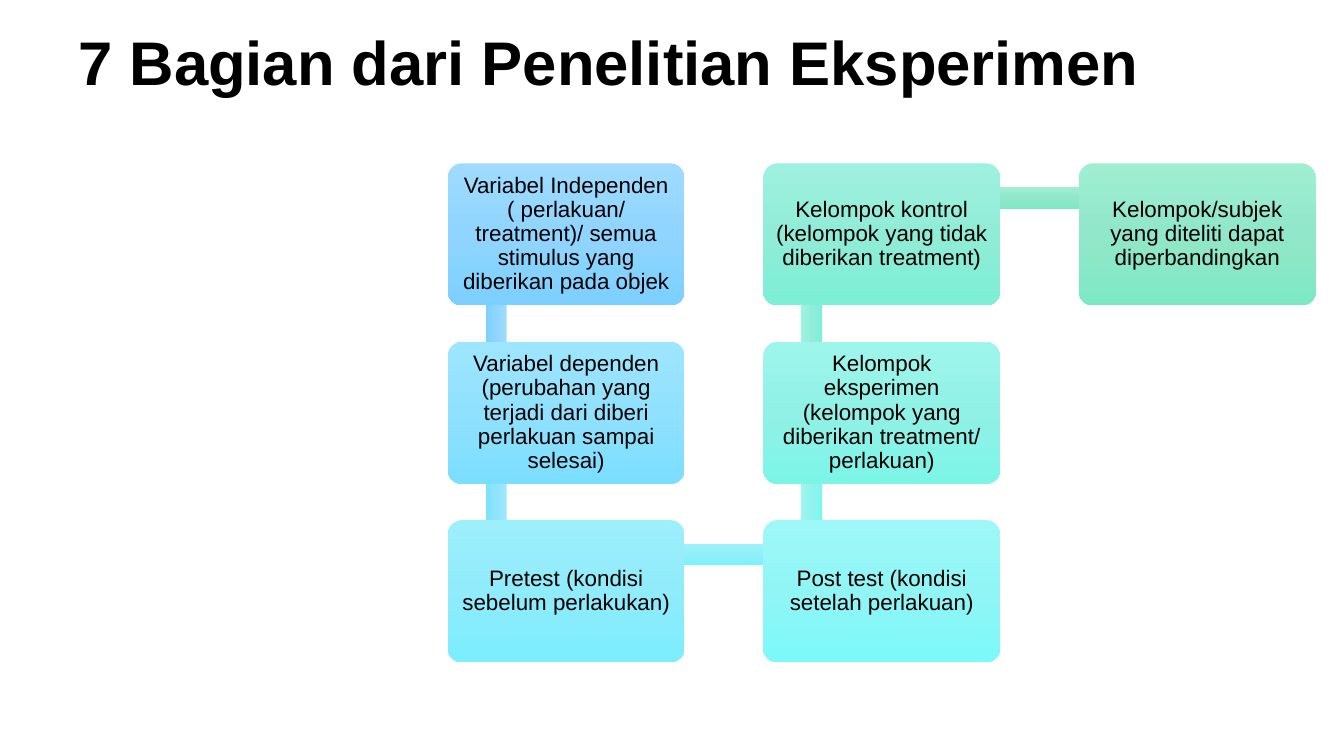
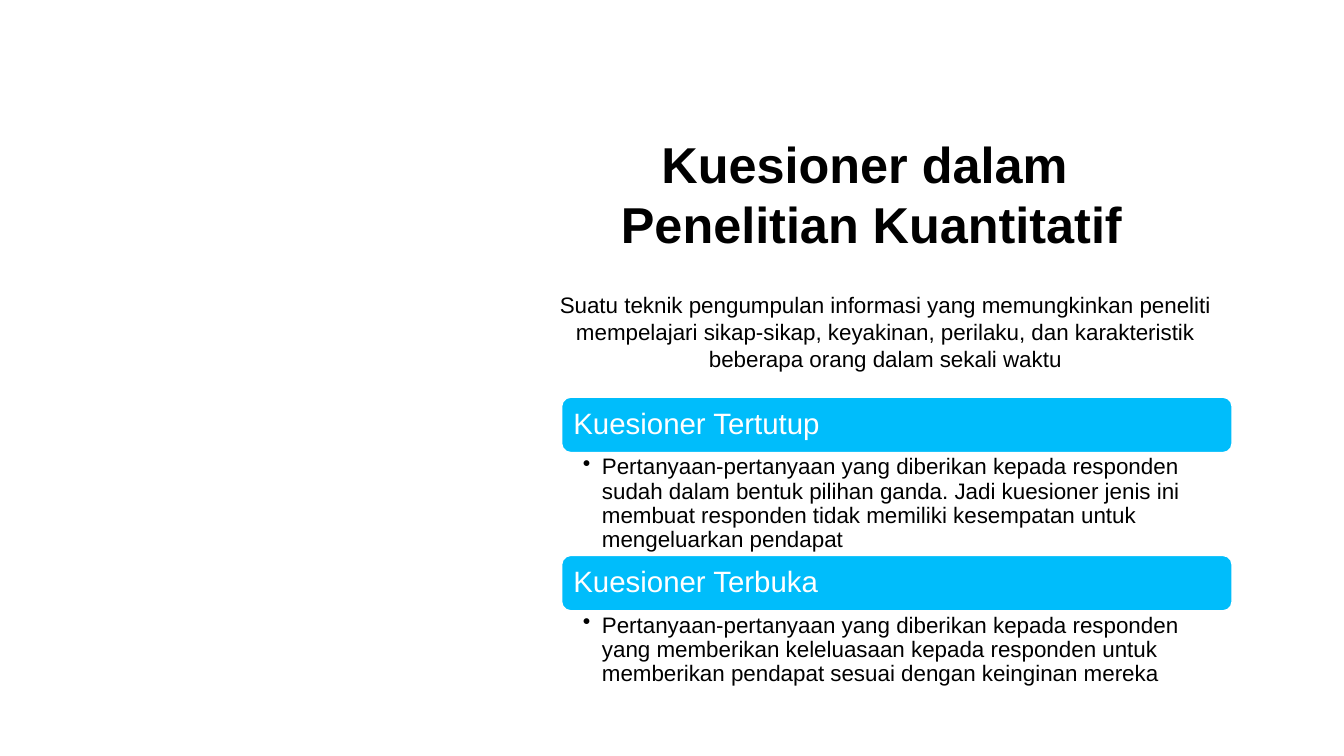
from lxml import etree
from pptx import Presentation
from pptx.dml.color import RGBColor
from pptx.enum.shapes import MSO_SHAPE
from pptx.enum.text import MSO_ANCHOR, PP_ALIGN
from pptx.oxml.ns import qn
from pptx.util import Inches, Pt

RECTANGLE = MSO_SHAPE.RECTANGLE
ROUNDED = MSO_SHAPE.ROUNDED_RECTANGLE
TOP, MIDDLE = MSO_ANCHOR.TOP, MSO_ANCHOR.MIDDLE
LEFT, CENTER = PP_ALIGN.LEFT, PP_ALIGN.CENTER

FONT = "Arial"
COLORS = {
    "text": "000000",
    "light": "FFFFFF",
    "heading": "00BDFB",
    "independent": ("9EDBFF", "90D5FF", "7CD0FF"),
    "dependent": ("9EE6FF", "90E1FE", "7CDEFF"),
    "dependent link": ("9EE8FF", "90E3FD", "7CE1FF"),
    "pretest": ("9EEFFC", "90EBFA", "7CEEFF"),
    "pretest link": ("9EF3FB", "90EFF8", "7CF2FD"),
    "posttest": ("9EF8F8", "91F5F6", "7CF9FA"),
    "posttest link": ("9EF6F0", "91F3ED", "7CF7EF"),
    "experiment": ("9EF5EB", "91F1E6", "7CF5E7"),
    "experiment link": ("9EF2E0", "91EDD9", "7CF0D8"),
    "control": ("9EF1DE", "91ECD7", "7CEFD5"),
    "subjects": ("9FEED2", "91E7C9", "7DE9C4"),
}

STEPS = [
    (0, 0, "independent", "independent",
     "Variabel Independen\v( perlakuan/ treatment)/ semua stimulus yang diberikan pada objek"),
    (0, 1, "dependent", "dependent link",
     "Variabel dependen (perubahan yang terjadi dari diberi perlakuan sampai selesai)"),
    (0, 2, "pretest", "pretest link", "Pretest (kondisi sebelum perlakukan)"),
    (1, 2, "posttest", "posttest link", "Post test (kondisi setelah perlakuan)"),
    (1, 1, "experiment", "experiment link",
     "Kelompok eksperimen (kelompok yang diberikan treatment/ perlakuan)"),
    (1, 0, "control", "subjects",
     "Kelompok kontrol (kelompok yang tidak diberikan treatment)"),
    (2, 0, "subjects", None, "Kelompok/subjek yang diteliti dapat diperbandingkan"),
]

QUESTIONNAIRES = [
    ("Kuesioner Tertutup", 1.02,
     "Pertanyaan-pertanyaan yang diberikan kepada responden sudah dalam bentuk pilihan ganda. "
     "Jadi kuesioner jenis ini membuat responden tidak memiliki kesempatan untuk "
     "mengeluarkan pendapat"),
    ("Kuesioner Terbuka", 0.78,
     "Pertanyaan-pertanyaan yang diberikan kepada responden yang memberikan keleluasaan "
     "kepada responden untuk memberikan pendapat sesuai dengan keinginan mereka"),
]


def inches(box):
    return [Inches(length) for length in box]


def write(shape, *lines, size=16, bold=False, color="text", align=CENTER, anchor=TOP,
          insets=(0.1, 0.05, 0.1, 0.05), spacing=None, bullet=None):
    frame = shape.text_frame
    frame.word_wrap = True
    frame.vertical_anchor = anchor
    (frame.margin_left, frame.margin_top,
     frame.margin_right, frame.margin_bottom) = inches(insets)
    for index, line in enumerate(lines):
        para = frame.add_paragraph() if index else frame.paragraphs[0]
        para.text = line
        para.alignment = align
        para.line_spacing = spacing
        if bullet:
            properties = para._p.get_or_add_pPr()
            properties.set("marL", str(Inches(0.19)))
            properties.set("indent", str(-Inches(0.19)))
            etree.SubElement(properties, qn("a:buChar")).set("char", bullet)
        for span in para.runs:
            span.font.name = FONT
            span.font.size = Pt(size)
            span.font.bold = bold
            span.font.color.rgb = RGBColor.from_string(COLORS[color])


def add_text(page, box, *lines, **style):
    write(page.shapes.add_textbox(*inches(box)), *lines, **style)


def add_title(page, box, *lines, **style):
    add_text(page, box, *lines, bold=True, **style)


def add_block(page, box, kind):
    shape = page.shapes.add_shape(kind, *inches(box))
    shape.shadow.inherit = False
    shape.line.fill.background()
    return shape


def shade(shape, color):
    shape.fill.gradient()
    shape.fill.gradient_angle = 270
    stops = shape._element.spPr.find(".//" + qn("a:gsLst"))
    for stop in list(stops):
        stops.remove(stop)
    for position, value in zip((0, 50000, 100000), COLORS[color]):
        stop = etree.SubElement(stops, qn("a:gs"), pos=str(position))
        etree.SubElement(stop, qn("a:srgbClr"), val=value)


def add_step_flow(page, left, top):
    width, height = 2.35, 1.41
    column_step, row_step = 3.13, 1.77
    thickness, link_offset = 0.21, 0.48
    for index, (column, row, color, link_color, text) in enumerate(STEPS):
        x, y = left + column * column_step, top + row * row_step
        if link_color:
            next_column, next_row = STEPS[index + 1][:2]
            if next_column > column:
                link_box = (x + link_offset, y + 0.24, column_step, thickness)
                rotation = 0
            else:
                middle = top + min(row, next_row) * row_step + 1.22
                link_box = (x + link_offset - row_step / 2, middle - thickness / 2,
                            row_step, thickness)
                rotation = 90 if next_row > row else 270
            link = add_block(page, link_box, RECTANGLE)
            link.rotation = rotation
            shade(link, link_color)
        step = add_block(page, (x, y, width, height), ROUNDED)
        step.adjustments[0] = 0.1
        shade(step, color)
        write(step, text, anchor=MIDDLE, insets=(0.07,) * 4, spacing=0.9)


def add_questionnaires(page, left, top, width):
    heading_height = 0.55
    for heading, body_height, body in QUESTIONNAIRES:
        band = add_block(page, (left, top, width, heading_height), ROUNDED)
        band.fill.solid()
        band.fill.fore_color.rgb = RGBColor.from_string(COLORS["heading"])
        band.line.color.rgb = RGBColor.from_string(COLORS["light"])
        band.line.width = Pt(1)
        write(band, heading, size=21, color="light", align=LEFT, anchor=MIDDLE,
              insets=(0.09,) * 4, spacing=0.9)
        top += heading_height
        add_text(page, (left, top, width, body_height), body, align=LEFT,
                 insets=(0.21, 0.03, 0.16, 0.03), spacing=0.9, bullet="•")
        top += body_height


def build_experiment_page(page):
    add_step_flow(page, 4.44, 1.62)
    add_title(page, (0.67, 0.27, 10.75, 1.25), "7 Bagian dari Penelitian Eksperimen",
              size=44, spacing=0.9)


def build_questionnaire_page(page):
    add_title(page, (5.46, 1.27, 6.37, 1.31), "Kuesioner dalam ", "Penelitian Kuantitatif",
              size=36)
    add_text(page, (5.22, 2.84, 7.12, 0.91),
             "Suatu teknik pengumpulan informasi yang memungkinkan peneliti mempelajari "
             "sikap-sikap, keyakinan, perilaku, dan karakteristik beberapa orang dalam "
             "sekali waktu")
    add_questionnaires(page, 5.57, 3.94, 6.65)


def main():
    deck = Presentation()
    deck.slide_width, deck.slide_height = Inches(13.33), Inches(7.5)
    for build in (build_experiment_page, build_questionnaire_page):
        build(deck.slides.add_slide(deck.slide_layouts[6]))
    deck.save("out.pptx")


if __name__ == "__main__":
    main()
